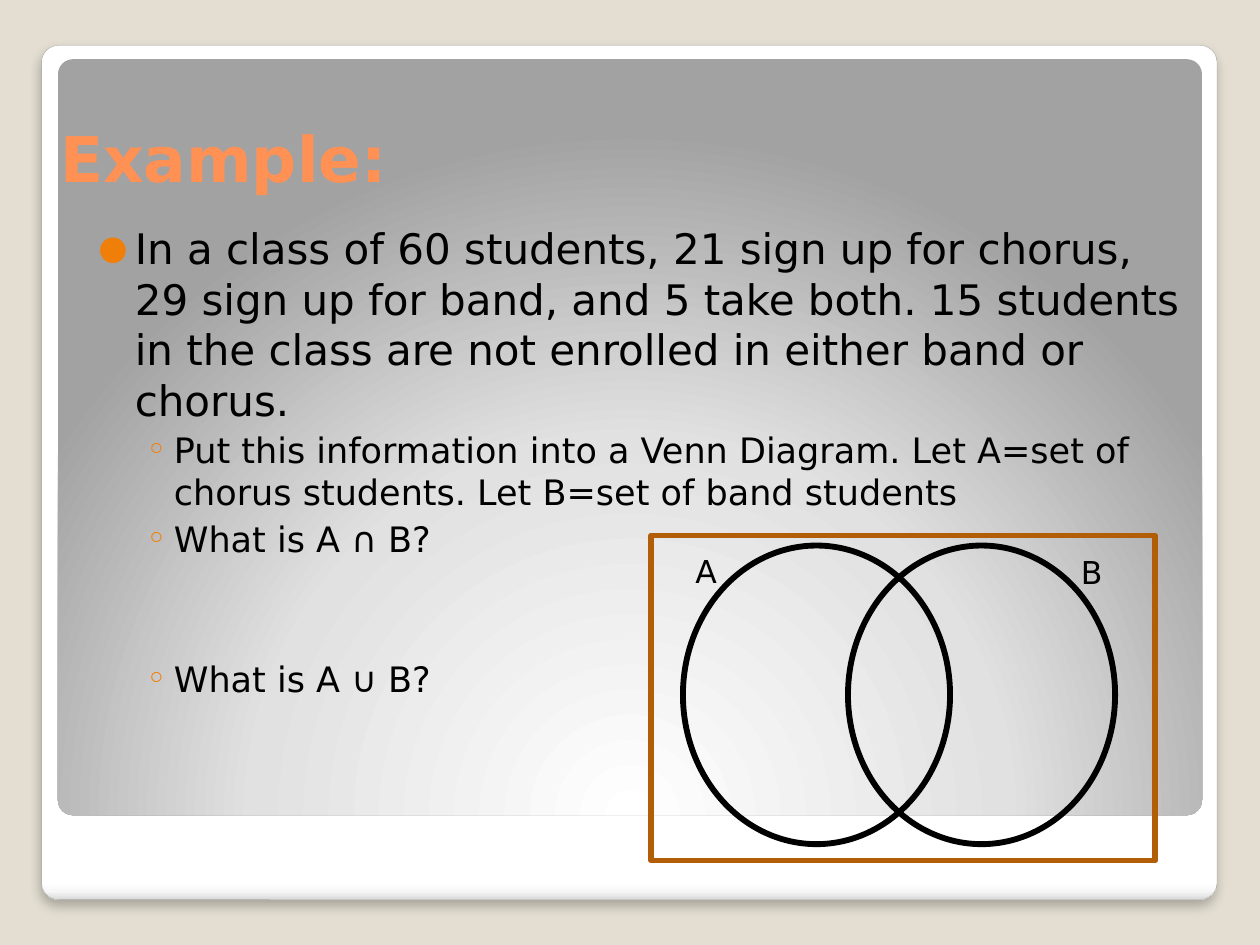
import lxml.etree
import pptx
import pptx.dml.color
import pptx.enum.shapes
import pptx.oxml
import pptx.oxml.ns
import pptx.util

Inches, Pt = pptx.util.Inches, pptx.util.Pt
RGBColor = pptx.dml.color.RGBColor
SHAPES = pptx.enum.shapes.MSO_SHAPE
qn = pptx.oxml.ns.qn

FONT = "DejaVu Sans"
BLACK = RGBColor(0x00, 0x00, 0x00)
BEIGE = RGBColor(0xE3, 0xDE, 0xD1)
GRAY = RGBColor(0xA4, 0xA4, 0xA4)
PEACH = RGBColor(0xFF, 0x91, 0x55)
ORANGE = RGBColor(0xF0, 0x7F, 0x09)
BROWN = RGBColor(0xB2, 0x5E, 0x07)


def write(frame, text, size, color=BLACK, bold=False, before=0,
          bullet=None, bullet_size=100, margin=0, hanging=0):
    """Fill the frame's first paragraph, or append one if it is taken."""
    para = frame.paragraphs[0]
    if para.runs:
        para = frame.add_paragraph()
    para.space_before = Pt(before)
    span = para.add_run()
    span.text = text
    span.font.name = FONT
    span.font.size = Pt(size)
    span.font.bold = bold
    span.font.color.rgb = color
    if bullet:
        props = para._p.get_or_add_pPr()
        props.set("marL", str(Inches(margin)))
        props.set("indent", str(-Inches(hanging)))
        bullet_color = lxml.etree.SubElement(props, qn("a:buClr"))
        lxml.etree.SubElement(bullet_color, qn("a:srgbClr"), val=str(ORANGE))
        lxml.etree.SubElement(props, qn("a:buSzPct"), val=str(bullet_size * 1000))
        lxml.etree.SubElement(props, qn("a:buFont"), typeface=FONT)
        lxml.etree.SubElement(props, qn("a:buChar"), char=bullet)


def add_panel(shapes, place, stops, direction):
    """Add a rounded panel; direction is the XML that orients its gradient."""
    panel = shapes.add_shape(SHAPES.ROUNDED_RECTANGLE, *map(Inches, place))
    panel.adjustments[0] = 0.02
    panel.shadow.inherit = False
    panel.line.fill.background()
    panel.fill.background()
    stop_xml = "".join(
        f'<a:gs pos="{position * 1000}"><a:srgbClr val="{color}"/></a:gs>'
        for position, color in stops)
    gradient = pptx.oxml.parse_xml(
        f'<a:gradFill {pptx.oxml.ns.nsdecls("a")} rotWithShape="1">'
        f'<a:gsLst>{stop_xml}</a:gsLst>{direction}</a:gradFill>')
    no_fill = panel._element.spPr.find(qn("a:noFill"))
    no_fill.getparent().replace(no_fill, gradient)
    return panel


deck = pptx.Presentation()
deck.slide_width, deck.slide_height = Inches(10), Inches(7.5)
page = deck.slides.add_slide(deck.slide_layouts[6])
page.background.fill.solid()
page.background.fill.fore_color.rgb = BEIGE

# Card with a soft shadow, and the shaded panel on it
card = add_panel(
    page.shapes, (0.33, 0.36, 9.33, 6.78),
    [(0, "FFFFFF"), (98, "FFFFFF"), (99, "F7F7F7"), (100, "DADADA")],
    '<a:lin ang="5400000" scaled="0"/>')
card.line.color.rgb = GRAY
card.line.width = Pt(0.16)
shadow = lxml.etree.SubElement(
    card._element.spPr.find(qn("a:effectLst")), qn("a:outerShdw"),
    blurRad=str(Pt(6)), dist=str(Pt(4)), dir="5400000", algn="t", rotWithShape="0")
shadow_color = lxml.etree.SubElement(shadow, qn("a:srgbClr"), val=str(BLACK))
lxml.etree.SubElement(shadow_color, qn("a:alpha"), val="25000")

add_panel(
    page.shapes, (0.46, 0.47, 9.08, 6),
    [(0, "FFFFFF"), (55, "E1E1E1"), (100, "A2A2A2")],
    '<a:path path="circle">'
    '<a:fillToRect l="50000" t="175000" r="50000" b="-75000"/></a:path>')

# Title
title = page.shapes.add_textbox(Inches(0.38), Inches(0.9), Inches(9), Inches(0.7))
title.text_frame.word_wrap = True
write(title.text_frame, "Example:", 36, color=PEACH, bold=True)

# Problem and questions
body = page.shapes.add_textbox(Inches(0.58), Inches(1.67), Inches(8.95), Inches(4.67))
frame = body.text_frame
frame.word_wrap = True
frame.margin_left, frame.margin_top = Inches(0.2), Inches(0.1)
frame.margin_right, frame.margin_bottom = Inches(0.1), Inches(0.05)
write(frame, "In a class of 60 students, 21 sign up for chorus, 29 sign up for band, "
      "and 5 take both. 15 students in the class are not enrolled in either band "
      "or chorus.", 24, before=2.5, bullet="●", bullet_size=80,
      margin=0.29, hanging=0.29)
questions = [
    ("Put this information into a Venn Diagram. Let A=set of chorus students. "
     "Let B=set of band students", 2.5),
    ("What is A ∩ B?", 2.5),
    ("What is A ∪ B?", 56),
]
for question, before in questions:
    write(frame, question, 20, before=before, bullet="◦", margin=0.6, hanging=0.22)

# Venn diagram
venn = page.shapes.add_group_shape().shapes
outlines = [
    (SHAPES.RECTANGLE, (5.17, 4.25, 4, 2.58), BROWN),
    (SHAPES.OVAL, (5.42, 4.33, 2.12, 2.37), BLACK),
    (SHAPES.OVAL, (6.73, 4.33, 2.12, 2.37), BLACK),
]
for kind, place, color in outlines:
    outline = venn.add_shape(kind, *map(Inches, place))
    outline.shadow.inherit = False
    outline.fill.background()
    outline.line.color.rgb = color
    outline.line.width = Pt(3.35)
for name, left, top in [("A", 5.42, 4.33), ("B", 8.48, 4.34)]:
    label = venn.add_textbox(Inches(left), Inches(top), Inches(0.5), Inches(0.35))
    label.text_frame.word_wrap = True
    write(label.text_frame, name, 18)

deck.save("out.pptx")
